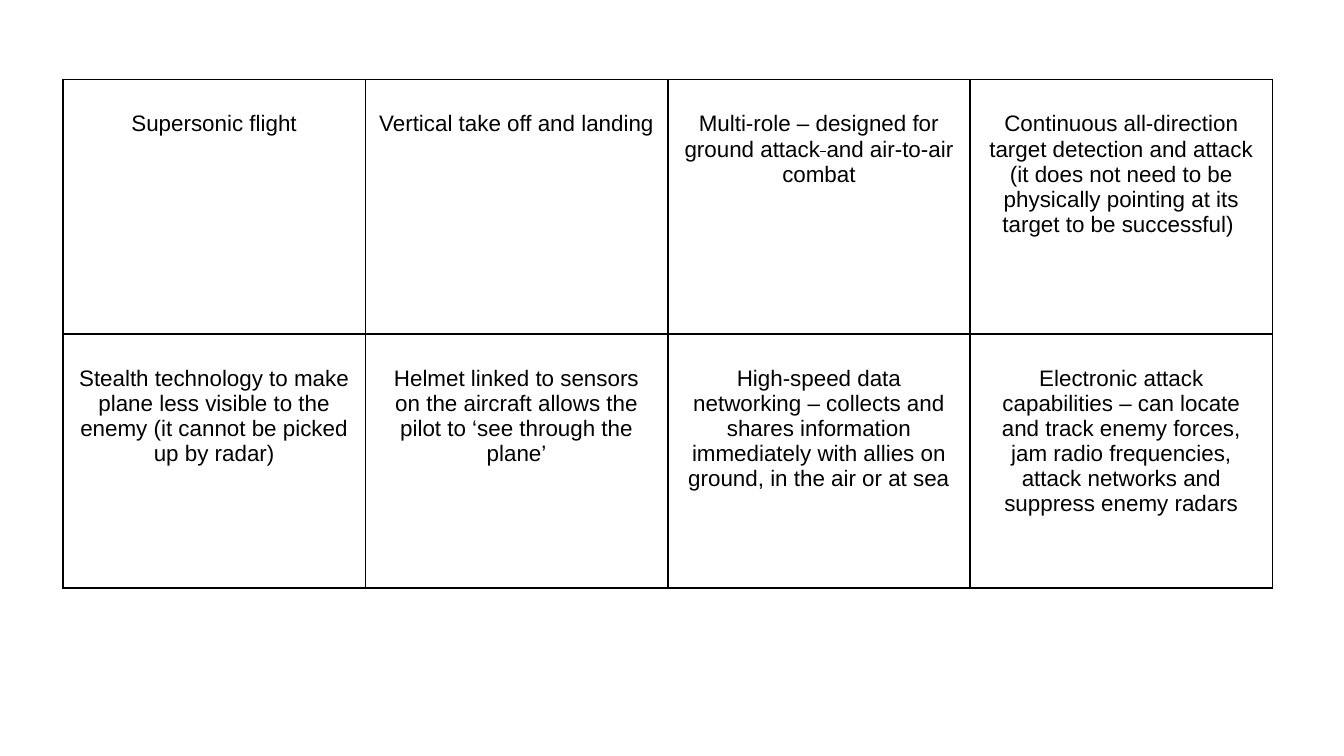
from dataclasses import dataclass

from lxml.etree import SubElement
from pptx import Presentation
from pptx.dml.color import RGBColor
from pptx.enum.text import PP_ALIGN
from pptx.oxml.ns import qn
from pptx.util import Cm, Pt


@dataclass(frozen=True)
class Theme:
    font: str = "Arial"
    size: int = 12
    ink: str = "000000"
    line: int = 1


THEME = Theme()
STRIKE = "~"
ROWS = [
    [
        "Supersonic flight",
        "Vertical take off and landing",
        "Multi-role – designed for ground attack~ ~and air-to-air combat",
        "Continuous all-direction target detection and attack (it does not need to "
        "be physically pointing at its target to be successful) ",
    ],
    [
        "Stealth technology to make plane less visible to the enemy "
        "(it cannot be picked up by radar)",
        "Helmet linked to sensors on the aircraft allows the pilot to "
        "‘see through the plane’",
        "High-speed data networking – collects and shares information "
        "immediately with allies on ground, in the air or at sea",
        "Electronic attack capabilities – can locate and track enemy forces, "
        "jam radio frequencies, attack networks and suppress enemy radars",
    ],
]


def style(item, form):
    for name, value in form.items():
        setattr(item, name, value)


def add_text(cell, text):
    para = cell.text_frame.paragraphs[0]
    para.alignment = PP_ALIGN.CENTER
    for i, part in enumerate(text.split(STRIKE)):
        run = para.add_run()
        run.text = part
        style(run.font, {"name": THEME.font, "size": Pt(THEME.size)})
        run.font.color.rgb = RGBColor.from_string(THEME.ink)
        if i % 2:
            run.font._element.set("strike", "sngStrike")


def add_edges(cell):
    props = cell._tc.get_or_add_tcPr()
    for side in "LRTB":
        edge = SubElement(props, qn(f"a:ln{side}"), w=str(Pt(THEME.line)))
        fill = SubElement(edge, qn("a:solidFill"))
        SubElement(fill, qn("a:srgbClr"), val=THEME.ink)


def add_grid(slide, rows, left, top, wide, high):
    frame = slide.shapes.add_table(len(rows), len(rows[0]), left, top, wide, high)
    grid = frame.table
    style(grid, {"first_row": False, "horz_banding": False})
    for r, row in enumerate(rows):
        for c, text in enumerate(row):
            cell = grid.cell(r, c)
            cell.margin_top = Cm(0.61)
            add_text(cell, text)
            add_edges(cell)
            cell.fill.background()


def main():
    """Build the slide with the table of aircraft features."""
    deck = Presentation()
    style(deck, {"slide_width": Cm(25.4), "slide_height": Cm(14.29)})
    slide = deck.slides.add_slide(deck.slide_layouts[6])
    add_grid(slide, ROWS, Cm(1.19), Cm(1.5), Cm(22.86), Cm(9.62))
    deck.save("out.pptx")


if __name__ == "__main__":
    main()
